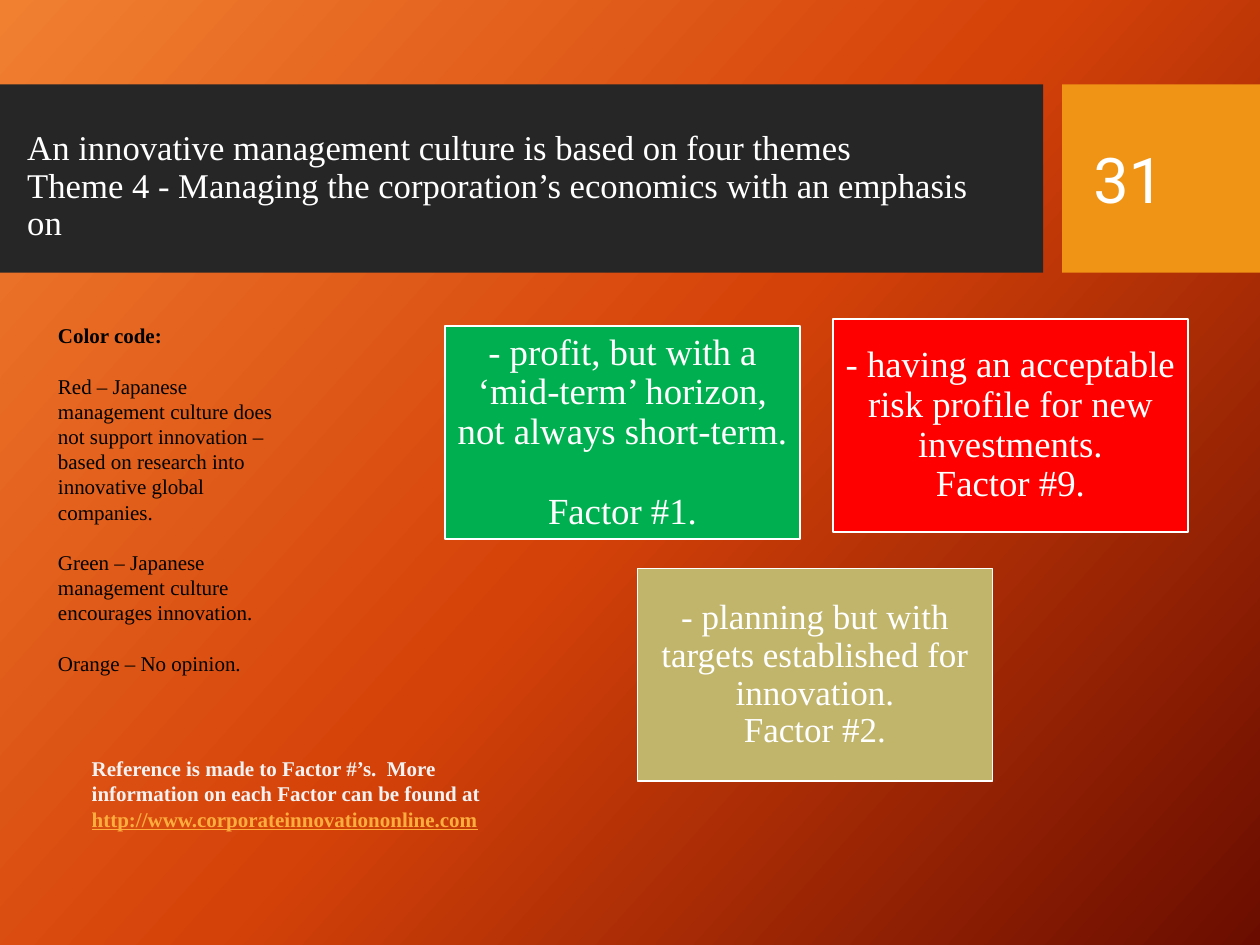
from copy import deepcopy

from pptx import Presentation
from pptx import util as u
from pptx.dml.color import RGBColor
from pptx.enum import shapes, text

WHITE = RGBColor(0xFF, 0xFF, 0xFF)
BLACK = RGBColor(0, 0, 0)
PALE = RGBColor(0xF2, 0xF2, 0xF2)
LINK = RGBColor(0xFF, 0xAE, 0x3E)
CHARCOAL = RGBColor(0x26, 0x26, 0x26)
AMBER = RGBColor(0xF0, 0x94, 0x15)
GREEN = RGBColor(0x00, 0xB0, 0x50)
RED = RGBColor(0xFF, 0x00, 0x00)
TAN = RGBColor(0xC1, 0xB5, 0x6B)
BACKGROUND = [
    (0, RGBColor(0xF1, 0x80, 0x31)),
    (0.5, RGBColor(0xD5, 0x42, 0x09)),
    (1, RGBColor(0x6A, 0x0D, 0x00)),
]
BACKGROUND_ANGLE = 42
SERIF = "Times New Roman"

TITLE = [
    "An innovative management culture is based on four themes",
    "Theme 4 - Managing the corporation’s economics with an emphasis on",
]
PAGE = "31"
BANDS = [((0, 21.03), CHARCOAL), ((21.41, 3.99), AMBER)]  # (left, width), fill

# left, top, fill, font size, inset, gap before the factor, lines
CARD_SIZE = (7.16, 4.29)
CARDS = [
    (8.97, 6.58, GREEN, 21, 0.23, 22.7,
     ["- profit, but with a ‘mid-term’ horizon, not always short-term.", "Factor #1."]),
    (16.79, 6.43, RED, 21, 0.23, 0,
     ["- having an acceptable risk profile for new investments.", "Factor #9."]),
    (12.85, 11.46, TAN, 20, 0.2, 0,
     ["- planning but with targets established for innovation.", "Factor #2."]),
]

COLOR_CODE = [
    ("Color code:", {"bold": True}),
    ("Red – Japanese management culture does not support innovation – "
     "based on research into innovative global companies.", {}),
    ("Green – Japanese management culture encourages innovation.", {}),
    ("Orange – No opinion.", {}),
]
REFERENCE = [
    ("Reference is made to Factor #’s.  More information on each Factor can be found at",
     {"bold": True}),
    ("http://www.corporateinnovationonline.com",
     {"bold": True, "color": LINK, "underline": True}),
]


def paint_background(slide):
    fill = slide.background.fill
    fill.gradient()
    fill.gradient_angle = 360 - BACKGROUND_ANGLE  # counted anticlockwise
    first = fill.gradient_stops[0]._gs
    first.addnext(deepcopy(first))
    for stop, (position, color) in zip(fill.gradient_stops, BACKGROUND):
        stop.position = position
        stop.color.rgb = color


def add_rect(slide, box, fill, line=None):
    sp = slide.shapes.add_shape(shapes.MSO_SHAPE.RECTANGLE, *map(u.Cm, box))
    sp.shadow.inherit = False
    sp.fill.solid()
    sp.fill.fore_color.rgb = fill
    if line is None:
        sp.line.fill.background()
    else:
        sp.line.color.rgb = line
        sp.line.width = u.Pt(1)
    return sp


def add_box(slide, box, anchor=text.MSO_ANCHOR.TOP):
    tf = slide.shapes.add_textbox(*map(u.Cm, box)).text_frame
    tf.word_wrap = True
    tf.vertical_anchor = anchor
    return tf


def write(tf, lines, size, color, font=SERIF, align=text.PP_ALIGN.LEFT, spacing=1.0, gap=0):
    """Write (text, style) lines as paragraphs, gap points apart."""
    for i, (words, style) in enumerate(lines):
        p = tf.add_paragraph() if i else tf.paragraphs[0]
        p.alignment = align
        p.line_spacing = spacing
        p.space_before = u.Pt(gap if i else 0)
        r = p.add_run()
        r.text = words
        r.font.name = font
        r.font.size = u.Pt(size)
        r.font.bold = style.get("bold", False)
        r.font.underline = style.get("underline", False)
        r.font.color.rgb = style.get("color", color)


def plain(lines):
    return [(line, {}) for line in lines]


def main():
    prs = Presentation()
    prs.slide_width, prs.slide_height = u.Cm(25.4), u.Cm(19.05)
    s = prs.slides.add_slide(prs.slide_layouts[6])
    paint_background(s)

    for (left, width), fill in BANDS:
        add_rect(s, (left, 1.7, width, 3.8), fill)
    write(add_box(s, (0.3, 2.51, 19.81, 3.18)), plain(TITLE), 19.8, WHITE, spacing=0.9)
    write(add_box(s, (21.79, 2.08, 3.23, 3.02), text.MSO_ANCHOR.MIDDLE),
          plain([PAGE]), 36, WHITE, font="Roboto")

    for left, top, fill, size, inset, gap, lines in CARDS:
        tf = add_rect(s, (left, top, *CARD_SIZE), fill, WHITE).text_frame
        tf.word_wrap = True
        tf.vertical_anchor = text.MSO_ANCHOR.MIDDLE
        tf.margin_left = tf.margin_right = tf.margin_top = tf.margin_bottom = u.Cm(inset)
        write(tf, plain(lines), size, WHITE, align=text.PP_ALIGN.CENTER, spacing=0.9, gap=gap)

    write(add_box(s, (1.6, 15.11, 8.61, 1.8)), REFERENCE, 12, PALE)
    write(add_box(s, (0.92, 6.38, 4.98, 7.44)), COLOR_CODE, 12, BLACK, gap=14.4)

    prs.save("out.pptx")


if __name__ == "__main__":
    main()
